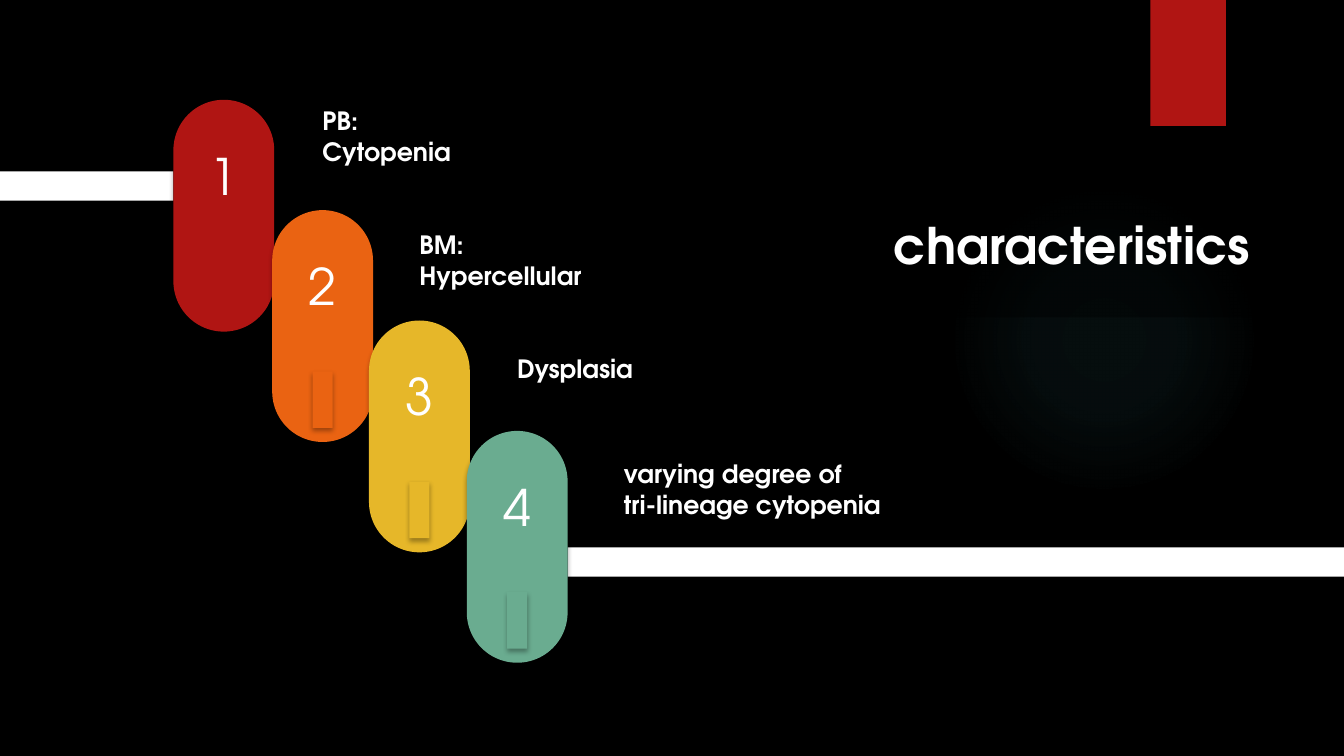
from lxml.etree import SubElement
from pptx import Presentation
from pptx.dml.color import RGBColor
from pptx.enum.shapes import MSO_SHAPE
from pptx.enum.text import MSO_ANCHOR, MSO_AUTO_SIZE, PP_ALIGN
from pptx.oxml import parse_xml
from pptx.oxml.ns import nsdecls, qn
from pptx.util import Inches, Pt

FONT = "TeX Gyre Adventor"
COLORS = {"black": "000000", "white": "FFFFFF", "red": "B01513",
          "orange": "EA6312", "gold": "E6B729", "green": "6AAC90",
          "glow": "50B9C1"}
TITLE = "characteristics"
# fill, pill left, label lines, label place, label size
STEPS = [
    ("red", 1.72, ["PB:", "Cytopenia"], (3.1, 1), (2.25, 0.71)),
    ("orange", 2.7, ["BM:", "Hypercellular"], (4.06, 2.23), (2.48, 0.71)),
    ("gold", 3.66, ["Dysplasia"], (5.03, 3.46), (2.46, 0.4)),
    ("green", 4.63, ["varying degree of", "tri-lineage cytopenia"],
     (6.09, 4.5), (2.8, 0.71)),
]
BARS = [("red", (11.41, 0, 0.75, 1.25)),
        ("white", (5.63, 5.43, 7.7, 0.29)),
        ("white", (0, 1.7, 1.72, 0.29))]
GLOW = [(0, 7), (36, 6), (69, 0)]  # position and opacity, percent
TOP, DROP = 0.99, 1.095
WIDE, HIGH = 1, 2.3


def rgb(name):
    return RGBColor.from_string(COLORS[name])


def place(at):
    return [Inches(n) for n in at]


def write(shape, lines, size=18, bold=False, align=PP_ALIGN.LEFT,
          anchor=MSO_ANCHOR.TOP, top=0.05):
    frame = shape.text_frame
    frame.word_wrap = True
    frame.auto_size = MSO_AUTO_SIZE.NONE
    frame.vertical_anchor = anchor
    frame.margin_top = Inches(top)
    frame.text = "\n".join(lines)
    for para in frame.paragraphs:
        para.alignment = align
        font = para.font
        font.name, font.size, font.bold = FONT, Pt(size), bold
        font.color.rgb = rgb("white")


def draw(shapes, kind, at, color, shade=False):
    shape = shapes.add_shape(kind, *place(at))
    shape.fill.solid()
    shape.fill.fore_color.rgb = rgb(color)
    shape.line.fill.background()
    shape.shadow.inherit = False
    if shade:
        effects = shape._element.spPr.find(qn("a:effectLst"))
        effects.append(parse_xml(
            f'<a:outerShdw {nsdecls("a")} blurRad="{Pt(3.5)}" '
            f'dist="{Pt(2.2)}" dir="5400000" rotWithShape="0">'
            f'<a:srgbClr val="{COLORS["black"]}"><a:alpha val="32000"/>'
            '</a:srgbClr></a:outerShdw>'))
    return shape


def add_glow(shapes):
    oval = draw(shapes, MSO_SHAPE.OVAL, (9.41, 1.83, 3.08, 3.08), "glow")
    stops = "".join(
        f'<a:gs pos="{pos * 1000}"><a:srgbClr val="{COLORS["glow"]}">'
        f'<a:alpha val="{alpha * 1000}"/></a:srgbClr></a:gs>'
        for pos, alpha in GLOW)
    props = oval._element.spPr
    props.replace(props.find(qn("a:solidFill")), parse_xml(
        f'<a:gradFill {nsdecls("a")}><a:gsLst>{stops}</a:gsLst>'
        '<a:path path="circle"><a:fillToRect l="50000" t="50000" '
        'r="50000" b="50000"/></a:path></a:gradFill>'))


def add_step(shapes, index, color, left):
    """Draw a numbered pill; all but the first have a tab."""
    top = TOP + index * DROP
    group = shapes.add_group_shape().shapes
    pill = draw(group, MSO_SHAPE.ROUNDED_RECTANGLE,
                (left, top, WIDE, HIGH), color, shade=True)
    pill.adjustments[0] = 0.5
    write(pill, [str(index + 1)], size=36, align=PP_ALIGN.CENTER, top=0.3)
    if index:
        draw(group, MSO_SHAPE.RECTANGLE,
             (left + 0.4, top + 1.6, 0.2, 0.56), color, shade=True)


def set_title(slide):
    title = slide.shapes.title
    title.left, title.top, title.width, title.height = place(
        (8.63, 1.69, 4, 1.46))
    title.fill.solid()
    title.fill.fore_color.rgb = rgb("black")
    tint = title._element.spPr.find(".//" + qn("a:srgbClr"))
    SubElement(tint, qn("a:alpha")).set("val", "42000")
    write(title, [TITLE], size=36, bold=True, align=PP_ALIGN.CENTER,
          anchor=MSO_ANCHOR.MIDDLE)
    slide.shapes._spTree.append(title._element)  # bring to front


def main():
    deck = Presentation()
    deck.slide_width, deck.slide_height = Inches(13.33), Inches(7.5)
    slide = deck.slides.add_slide(deck.slide_layouts[5])
    slide.background.fill.solid()
    slide.background.fill.fore_color.rgb = rgb("black")
    shapes = slide.shapes
    add_glow(shapes)
    for color, at in BARS:
        draw(shapes, MSO_SHAPE.RECTANGLE, at, color)
    for index, (color, left, lines, spot, size) in enumerate(STEPS):
        add_step(shapes, index, color, left)
        label = shapes.add_textbox(*place(spot + size))
        write(label, lines, bold=True)
    set_title(slide)
    deck.save("out.pptx")


if __name__ == "__main__":
    main()
